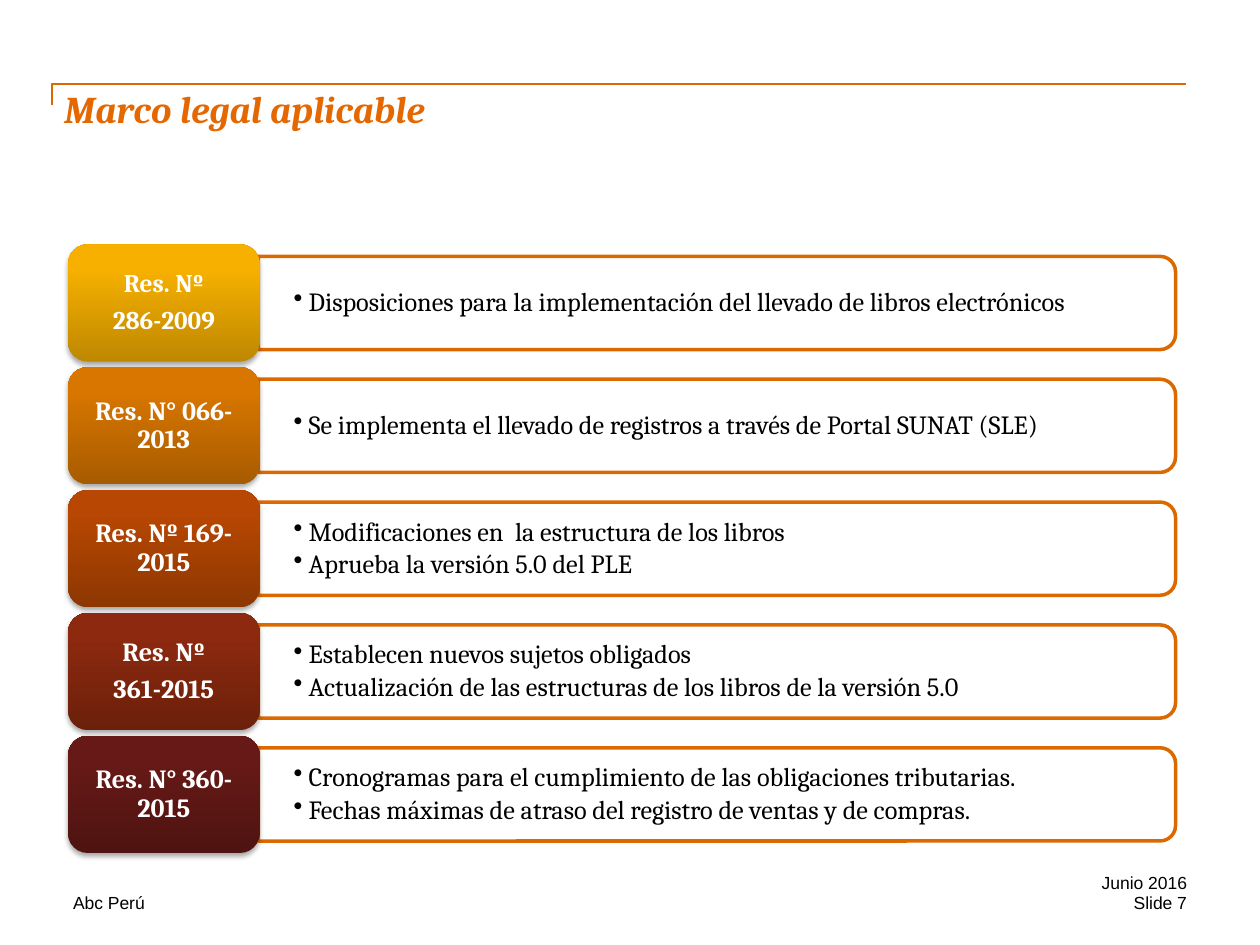
from lxml import etree
from pptx import Presentation
from pptx.dml.color import RGBColor
from pptx.enum.shapes import MSO_CONNECTOR, MSO_SHAPE
from pptx.enum.text import MSO_ANCHOR as ANCHOR, PP_ALIGN as ALIGN
from pptx.oxml import parse_xml
from pptx.oxml.ns import nsdecls, qn
from pptx.util import Inches, Pt

ORANGE = RGBColor(0xDC, 0x69, 0x00)
TITLE_ORANGE = RGBColor(0xE5, 0x67, 0x00)
WHITE = RGBColor(0xFF, 0xFF, 0xFF)
BLACK = RGBColor(0x00, 0x00, 0x00)

# badge lines, badge text size, dark and light gradient colours, bullets, bullet alignment
RESOLUTIONS = [
    (["Res. Nº", "286-2009"], 14.5, RGBColor(0xBE, 0x88, 0x00), RGBColor(0xF7, 0xB0, 0x00),
     ["Disposiciones para la implementación del llevado de libros electrónicos"], ALIGN.LEFT),
    (["Res. N° 066-2013"], 15, RGBColor(0xA7, 0x5B, 0x00), RGBColor(0xD8, 0x76, 0x00),
     ["Se implementa el llevado de registros a través de Portal SUNAT (SLE)"], ALIGN.LEFT),
    (["Res. Nº 169-2015"], 15, RGBColor(0x8D, 0x37, 0x02), RGBColor(0xB7, 0x47, 0x02),
     ["Modificaciones en  la estructura de los libros",
      "Aprueba la versión 5.0 del PLE"], ALIGN.LEFT),
    (["Res. Nº", "361-2015"], 15, RGBColor(0x6C, 0x20, 0x0B), RGBColor(0x8C, 0x29, 0x0F),
     ["Establecen nuevos sujetos obligados",
      "Actualización de las estructuras de los libros de la versión 5.0"], ALIGN.JUSTIFY),
    (["Res. N° 360-2015"], 15, RGBColor(0x4F, 0x14, 0x11), RGBColor(0x66, 0x19, 0x16),
     ["Cronogramas para el cumplimiento de las obligaciones tributarias.",
      "Fechas máximas de atraso del registro de ventas y de compras."], ALIGN.JUSTIFY),
]


def write(sp, lines, font, align=ALIGN.LEFT, anchor=ANCHOR.TOP, margins=(0, 0), spacing=None):
    """Fill sp with one paragraph per line; margins are (horizontal, vertical) in inches."""
    tf = sp.text_frame
    horizontal, vertical = (Inches(m) for m in margins)
    frame_format = {"word_wrap": True, "vertical_anchor": anchor,
                    "margin_left": horizontal, "margin_right": horizontal,
                    "margin_top": vertical, "margin_bottom": vertical}
    for name, value in frame_format.items():
        setattr(tf, name, value)
    for i, line in enumerate(lines):
        p = tf.paragraphs[0] if i == 0 else tf.add_paragraph()
        p.alignment = align
        if spacing is not None:
            p.line_spacing, p.space_after = 0.9, Pt(spacing)
        r = p.add_run()
        r.text = line
        for name, value in font.items():
            if name == "color":
                r.font.color.rgb = value
            else:
                setattr(r.font, name, value)
    return tf


prs = Presentation()
prs.slide_width, prs.slide_height = Inches(10), Inches(7.5)
s = prs.slides.add_slide(prs.slide_layouts[6])

# Corner rule: a two-segment elbow, turned a quarter so that its long arm is horizontal
rule = s.shapes.add_connector(MSO_CONNECTOR.ELBOW, Inches(5), Inches(5.25),
                              Inches(4.83), Inches(-3.75))
rule.line.color.rgb = ORANGE
rule.line.width = Pt(1)
rule_pr = rule._element.spPr
rule_pr.find(qn("a:prstGeom")).set("prst", "bentConnector2")
rule_pr.find(qn("a:xfrm")).set("rot", "5400000")
etree.SubElement(rule_pr, qn("a:effectLst"))

title = s.shapes.add_textbox(Inches(0.51), Inches(0.68), Inches(8.83), Inches(0.58))
write(title, ["Marco legal aplicable"],
      {"name": "Cambria", "size": Pt(21.6), "bold": True, "italic": True, "color": TITLE_ORANGE})

# One row per resolution: outlined bar, bullets, gradient badge
FIRST_TOP, LAST_TOP = 1.94, 5.84
PITCH = (LAST_TOP - FIRST_TOP) / (len(RESOLUTIONS) - 1)
BADGE_LEFT, BADGE_W, BADGE_H = 0.54, 1.52, 0.93
BAR_LEFT, BAR_W, BAR_H = 2.05, 7.28, 0.74
TEXT_H = 0.67

for i, (badge_lines, badge_size, dark, light, bullets, align) in enumerate(RESOLUTIONS):
    top = FIRST_TOP + i * PITCH
    middle = top + BADGE_H / 2

    # Upright shape turned 90 degrees, so its rounded top becomes the right end
    bar = s.shapes.add_shape(MSO_SHAPE.ROUND_2_SAME_RECTANGLE,
                             Inches(BAR_LEFT + (BAR_W - BAR_H) / 2), Inches(middle - BAR_W / 2),
                             Inches(BAR_H), Inches(BAR_W))
    bar.rotation = 90
    bar.shadow.inherit = False
    bar.fill.solid()
    bar.fill.fore_color.rgb = WHITE
    bar.line.color.rgb = ORANGE
    bar.line.width = Pt(2)

    body = s.shapes.add_textbox(Inches(2.06), Inches(middle - TEXT_H / 2),
                                Inches(7.24), Inches(TEXT_H))
    tf = write(body, bullets, {"name": "Cambria", "size": Pt(15), "color": BLACK},
               align, ANCHOR.MIDDLE, (0.27, 0.14), spacing=2.25)
    for p in tf.paragraphs:
        p_pr = p._p.get_or_add_pPr()
        p_pr.set("marL", str(Inches(0.12)))
        p_pr.set("indent", str(Inches(-0.12)))
        etree.SubElement(p_pr, qn("a:buChar"), char="•")

    badge = s.shapes.add_shape(MSO_SHAPE.ROUNDED_RECTANGLE, Inches(BADGE_LEFT), Inches(top),
                               Inches(BADGE_W), Inches(BADGE_H))
    badge.line.fill.background()
    badge.fill.gradient()
    badge.fill.gradient_angle = 90
    for stop, position, color in zip(badge.fill.gradient_stops, (0, 0.8), (dark, light)):
        stop.position = position
        stop.color.rgb = color
    badge.shadow.inherit = False
    badge._element.spPr.find(qn("a:effectLst")).append(parse_xml(
        f'<a:outerShdw {nsdecls("a")} blurRad="{Pt(3.1)}" dist="{Pt(1.8)}" dir="5400000" '
        'rotWithShape="0"><a:srgbClr val="000000"><a:alpha val="35000"/></a:srgbClr>'
        '</a:outerShdw>'))
    write(badge, badge_lines,
          {"name": "Cambria", "size": Pt(badge_size), "bold": True, "color": WHITE},
          ALIGN.CENTER, ANCHOR.MIDDLE, (0.1, 0.08), spacing=5.25)

FOOTERS = [("Abc Perú", 0.58, 7.08, 2.83, ALIGN.LEFT),
           ("Slide 7", 7.75, 7.08, 1.67, ALIGN.RIGHT),
           ("Junio 2016", 7.75, 6.92, 1.67, ALIGN.RIGHT)]
for text, left, top, width, align in FOOTERS:
    footer = s.shapes.add_textbox(Inches(left), Inches(top), Inches(width), Inches(0.17))
    write(footer, [text], {"name": "Arial", "size": Pt(10), "color": BLACK}, align)

prs.save("out.pptx")
